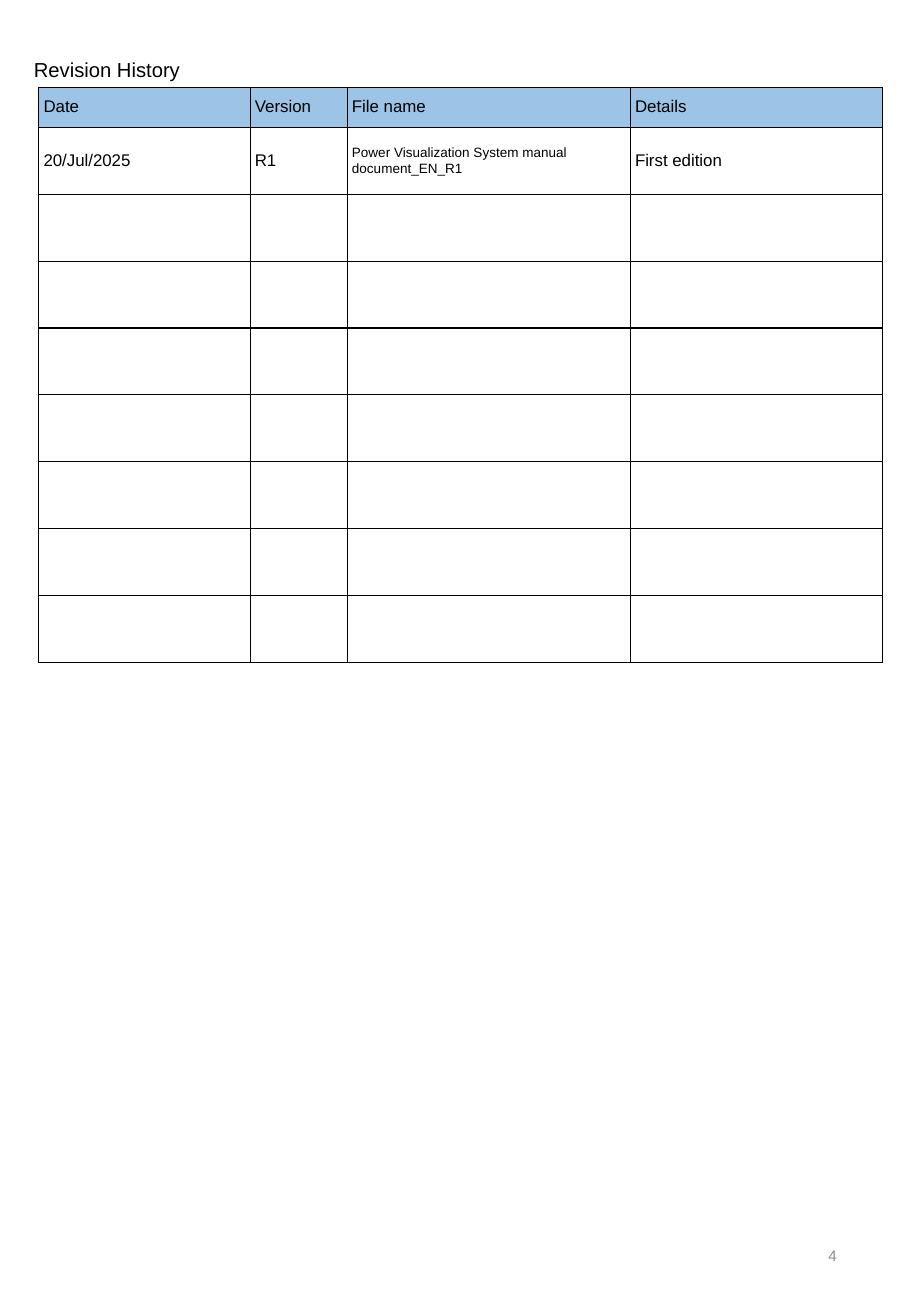
from lxml.etree import SubElement
from pptx import Presentation
from pptx.dml.color import RGBColor
from pptx.enum.text import MSO_ANCHOR, PP_ALIGN
from pptx.oxml import parse_xml
from pptx.oxml.ns import nsdecls
from pptx.util import Cm, Pt

BLACK = RGBColor(0x00, 0x00, 0x00)
GRAY = RGBColor(0x8C, 0x8C, 0x8C)
HEADER_BLUE = RGBColor(0x9D, 0xC3, 0xE6)

COLUMN_WIDTHS = [4.42, 2.03, 5.92, 5.28]
HEADER_HEIGHT, ROW_HEIGHT = 0.84, 1.4
ROW_COUNT = 9
REVISIONS = [
    ["Date", "Version", "File name", "Details"],
    ["20/Jul/2025", "R1", "Power Visualization System manual document_EN_R1", "First edition"],
]


def write(text_frame, text, size, color):
    paragraph = text_frame.paragraphs[0]
    paragraph.text = text
    paragraph.font.name = "Arial"
    paragraph.font.size = Pt(size)
    paragraph.font.color.rgb = color
    return paragraph


def add_borders(cell):
    properties = cell._tc.get_or_add_tcPr()
    for side in "LRTB":
        properties.append(parse_xml(
            f'<a:ln{side} {nsdecls("a")} w="{Pt(0.75)}"><a:solidFill>'
            f'<a:srgbClr val="{BLACK}"/></a:solidFill></a:ln{side}>'))


presentation = Presentation()
presentation.slide_width = Cm(19.05)
presentation.slide_height = Cm(27.51)
slide = presentation.slides.add_slide(presentation.slide_layouts[6])

# Heading
heading = slide.shapes.add_textbox(Cm(0.3), Cm(1.07), Cm(3.96), Cm(0.76))
heading.text_frame.word_wrap = True
heading.text_frame.vertical_anchor = MSO_ANCHOR.MIDDLE
heading.text_frame.margin_left = Cm(0.41)
write(heading.text_frame, "Revision History", 12, BLACK)

# Revision table
table = slide.shapes.add_table(
    ROW_COUNT, len(COLUMN_WIDTHS), Cm(0.81), Cm(1.82), Cm(sum(COLUMN_WIDTHS)),
    Cm(HEADER_HEIGHT + (ROW_COUNT - 1) * ROW_HEIGHT)).table
table.first_row = False
table.horz_banding = False
for column, width in zip(table.columns, COLUMN_WIDTHS):
    column.width = Cm(width)
for row_index, row in enumerate(table.rows):
    row.height = Cm(ROW_HEIGHT if row_index else HEADER_HEIGHT)
    for column_index, cell in enumerate(row.cells):
        add_borders(cell)
        if row_index == 0:
            cell.fill.solid()
            cell.fill.fore_color.rgb = HEADER_BLUE
        else:
            cell.fill.background()
        if row_index < len(REVISIONS):
            cell.vertical_anchor = MSO_ANCHOR.MIDDLE
            cell.margin_left = Cm(0.1)
            is_file_name = row_index == 1 and column_index == 2
            write(cell.text_frame, REVISIONS[row_index][column_index],
                  8 if is_file_name else 10, BLACK)

# Page number
page_number = slide.shapes.add_textbox(Cm(13.46), Cm(25.5), Cm(4.29), Cm(1.47))
page_number.text_frame.word_wrap = True
page_number.text_frame.vertical_anchor = MSO_ANCHOR.MIDDLE
write(page_number.text_frame, "4", 9, GRAY).alignment = PP_ALIGN.RIGHT

presentation.save("out.pptx")
